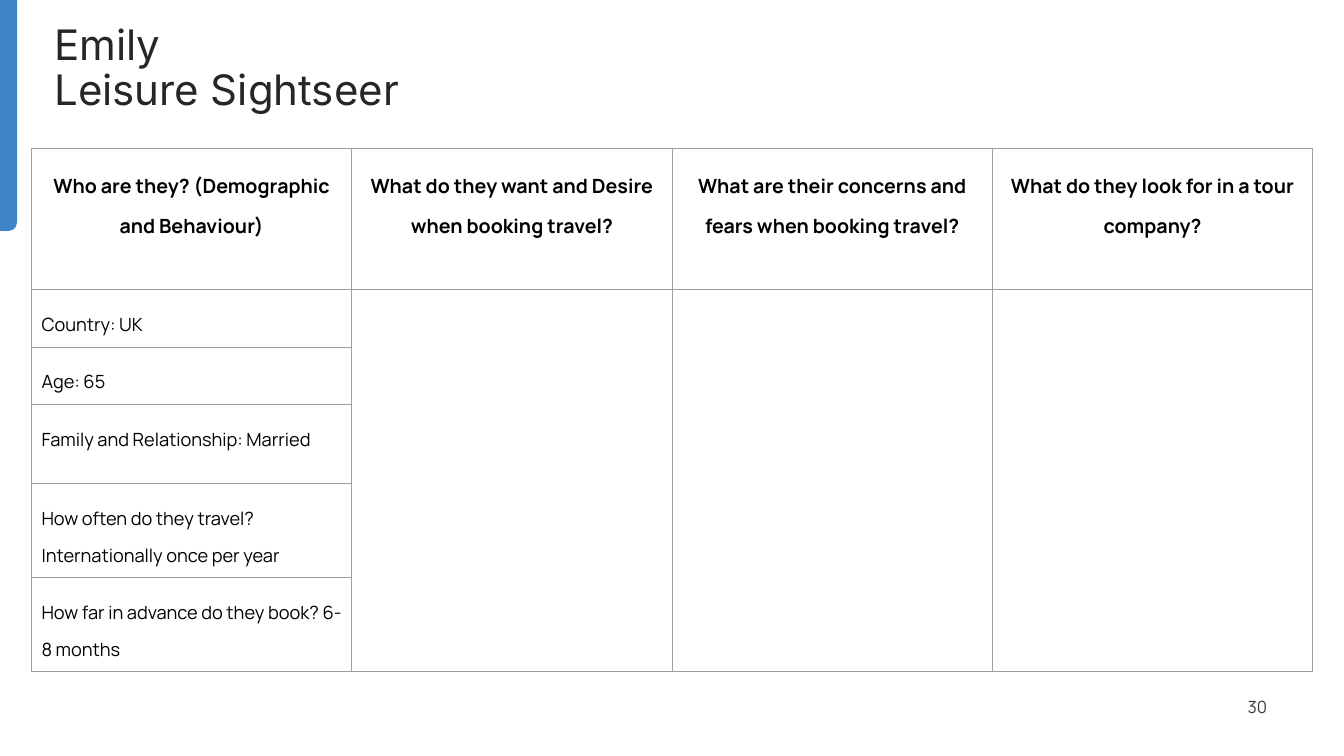
from pptx import Presentation
from pptx.dml.color import RGBColor
from pptx.enum.shapes import MSO_SHAPE as Shape
from pptx.enum.text import MSO_ANCHOR as Anchor, MSO_AUTO_SIZE as Auto, PP_ALIGN as Align
from pptx.oxml import parse_xml
from pptx.oxml.ns import nsdecls, qn
from pptx.util import Pt

HEADS = [
    "Who are they? (Demographic and Behaviour)",
    "What do they want and Desire when booking travel?",
    "What are their concerns and fears when booking travel?",
    "What do they look for in a tour company?",
]
FACTS = [
    "Country: UK",
    "Age: 65",
    "Family and Relationship: Married",
    "How often do they travel? Internationally once per year",
    "How far in advance do they book? 6-8 months",
]
ROWS = [100.8, 40.8, 41.2, 56.4, 67.2, 67.2]
PAD = 7.2


def color(code):
    return RGBColor.from_string(code)


def write(para, text, size, font, code, bold=False, align=Align.LEFT, space=1.0):
    para.alignment = align
    para.line_spacing = space
    run = para.add_run()
    run.text = text
    run.font.size = Pt(size)
    run.font.name = font
    run.font.bold = bold
    run.font.color.rgb = color(code)


def add_box(slide, left, top, width, height, pad_x, pad_y):
    box = slide.shapes.add_textbox(Pt(left), Pt(top), Pt(width), Pt(height))
    frame = box.text_frame
    frame.word_wrap = True
    frame.margin_left = frame.margin_right = Pt(pad_x)
    frame.margin_top = frame.margin_bottom = Pt(pad_y)
    return frame


def add_bar(slide, left, top, width, height):
    bar = slide.shapes.add_shape(
        Shape.ROUND_1_RECTANGLE, Pt(left), Pt(top), Pt(width), Pt(height))
    bar.adjustments[0] = 0.5
    bar.shadow.inherit = False
    bar.fill.solid()
    bar.fill.fore_color.rgb = color("3D85C6")
    bar.line.fill.background()
    # Turn the round corner to the bottom right
    bar.element.spPr.find(qn("a:xfrm")).set("flipV", "1")


def add_title(slide, left, top, width, height):
    frame = add_box(slide, left, top, width, height, PAD, PAD)
    frame.auto_size = Auto.SHAPE_TO_FIT_TEXT
    write(frame.paragraphs[0], "Emily", 30, "Inter", "262627", space=0.9)
    write(frame.add_paragraph(), "Leisure Sightseer", 30, "Inter", "262627", space=0.9)


def style_cell(cell):
    cell.margin_left = cell.margin_right = Pt(PAD)
    cell.margin_top = cell.margin_bottom = Pt(PAD)
    cell.fill.background()
    props = cell._tc.get_or_add_tcPr()
    # Borders come before the fill
    for i, side in enumerate(("lnL", "lnR", "lnT", "lnB")):
        props.insert(i, parse_xml(
            f'<a:{side} {nsdecls("a")} w="{Pt(0.75)}"><a:solidFill>'
            f'<a:srgbClr val="9E9E9E"/></a:solidFill></a:{side}>'))


def add_grid(slide, left, top, width):
    count = len(HEADS)
    grid = slide.shapes.add_table(
        len(ROWS), count, Pt(left), Pt(top), Pt(width), Pt(sum(ROWS))).table
    grid.first_row = grid.horz_banding = False
    for col in grid.columns:
        col.width = Pt(width / count)
    for row, height in zip(grid.rows, ROWS):
        row.height = Pt(height)
    for cell in grid.iter_cells():
        style_cell(cell)

    # Header row
    for i, head in enumerate(HEADS):
        write(grid.cell(0, i).text_frame.paragraphs[0], head, 14, "Manrope",
              "000000", True, Align.CENTER, 1.5)
    # Facts in the first column, open cells beside them
    for i, fact in enumerate(FACTS, 1):
        write(grid.cell(i, 0).text_frame.paragraphs[0], fact, 13, "Manrope",
              "000000", space=1.5)
    for i in range(1, count):
        grid.cell(1, i).merge(grid.cell(len(FACTS), i))


def add_number(slide, left, top, width, height):
    frame = add_box(slide, left, top, width, height, 0, 3.6)
    frame.vertical_anchor = Anchor.MIDDLE
    write(frame.paragraphs[0], "30", 12, "Manrope", "3B3B3C", align=Align.RIGHT)


def main():
    deck = Presentation()
    deck.slide_width, deck.slide_height = Pt(960), Pt(540)
    slide = deck.slides.add_slide(deck.slide_layouts[6])
    add_bar(slide, 0, 0, 12.2, 165)
    add_number(slide, 869.8, 490.3, 35.3, 28.8)
    add_grid(slide, 22.5, 106.3, 915.2)
    add_title(slide, 31.7, 10.1, 378, 79.9)
    deck.save("out.pptx")


if __name__ == "__main__":
    main()
